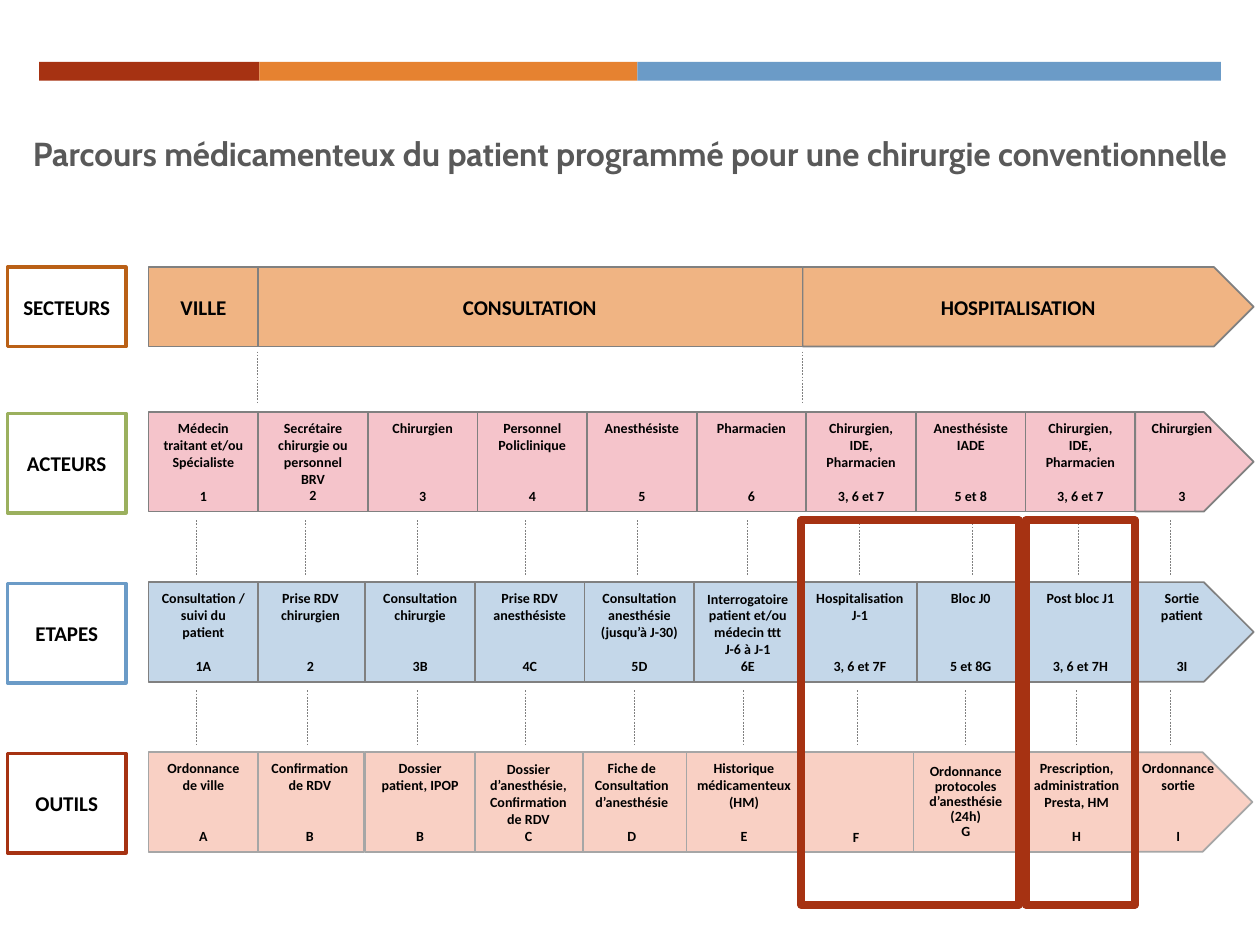
import pptx
import pptx.util
import pptx.dml.color
import pptx.enum.dml
import pptx.enum.shapes
import pptx.enum.text
import pptx.oxml.ns
import lxml.etree

Inches, Pt = pptx.util.Inches, pptx.util.Pt
RGBColor = pptx.dml.color.RGBColor
SHAPE = pptx.enum.shapes.MSO_SHAPE
ANCHOR = pptx.enum.text.MSO_ANCHOR
CENTER = pptx.enum.text.PP_ALIGN.CENTER

BLACK = RGBColor(0x00, 0x00, 0x00)
WHITE = RGBColor(0xFF, 0xFF, 0xFF)
TITLE_GRAY = RGBColor(0x59, 0x59, 0x59)
GRAY = RGBColor(0x80, 0x80, 0x80)
LIGHT_GRAY = RGBColor(0xA6, 0xA6, 0xA6)
RED = RGBColor(0xA6, 0x32, 0x12)
ORANGE = RGBColor(0xE6, 0x82, 0x30)
BLUE = RGBColor(0x6B, 0x9B, 0xC7)
BROWN = RGBColor(0xBA, 0x60, 0x16)
GREEN = RGBColor(0x9B, 0xB0, 0x5E)
PEACH = RGBColor(0xF0, 0xB4, 0x83)
PINK = RGBColor(0xF5, 0xC4, 0xCB)
PALE_BLUE = RGBColor(0xC4, 0xD7, 0xE9)
SALMON = RGBColor(0xF9, 0xD0, 0xC4)

CELL_LINES = 5      # text lines in a cell; the code stands on the last one
LINE_HEIGHT = 9.77  # points, for 8 pt text
ROW_HEIGHT = 0.79

# Cells: label, number of lines it wraps to, code
ACTORS = [
    ("Médecin traitant et/ou Spécialiste", 3, "1"),
    ("Secrétaire chirurgie ou personnel BRV", 4, "2"),
    ("Chirurgien", 1, "3"),
    ("Personnel Policlinique", 2, "4"),
    ("Anesthésiste", 1, "5"),
    ("Pharmacien", 1, "6"),
    ("Chirurgien, IDE, Pharmacien", 3, "3, 6 et 7"),
    ("Anesthésiste IADE", 2, "5 et 8"),
    ("Chirurgien, IDE, Pharmacien", 3, "3, 6 et 7"),
    ("Chirurgien", 1, "3"),
]
STEPS = [
    ("Consultation / suivi du patient", 3, "1A"),
    ("Prise RDV chirurgien", 2, "2"),
    ("Consultation chirurgie", 2, "3B"),
    ("Prise RDV anesthésiste", 2, "4C"),
    ("Consultation anesthésie (jusqu’à J-30)", 3, "5D"),
    ("Interrogatoire patient et/ou médecin ttt\nJ-6 à J-1", 4, "6E"),
    ("Hospitalisation\nJ-1", 2, "3, 6 et 7F"),
    ("Bloc J0", 1, "5 et 8G"),
    ("Post bloc J1", 1, "3, 6 et 7H"),
    ("Sortie patient", 2, "3I"),
]
TOOLS = [
    ("Ordonnance de ville", 2, "A"),
    ("Confirmation de RDV", 2, "B"),
    ("Dossier patient, IPOP", 2, "B"),
    ("Dossier d’anesthésie, Confirmation de RDV", 4, "C"),
    ("Fiche de Consultation d’anesthésie", 3, "D"),
    ("Historique médicamenteux (HM)", 3, "E"),
    ("", 0, "F"),
    ("Ordonnance protocoles d’anesthésie (24h)", 4, "G"),
    ("Prescription, administration Presta, HM", 3, "H"),
    ("Ordonnance sortie", 2, "I"),
]

ACTOR_LEFTS = [1.18 + 0.87 * i for i in range(10)]
STEP_LEFTS = [1.18, 2.03, 2.9, 3.77, 4.64, 5.5, 6.37, 7.27, 8.14, 9.01]
TOOL_LEFTS = [1.18, 2.03, 2.9, 3.76, 4.58, 5.43, 6.34, 7.23, 8.09, 8.96]
ACTOR_WIDTHS = [0.87] * 9 + [0.94]
STEP_WIDTHS = [0.87] * 6 + [0.91, 0.87, 0.87, 0.94]
TOOL_WIDTHS = [0.87, 0.86, 0.87, 0.87, 0.87, 0.95, 0.91, 0.87, 0.91, 0.98]


def add_box(page, kind, left, top, width, height, fill, line, line_width=1):
    box = page.shapes.add_shape(kind, Inches(left), Inches(top), Inches(width), Inches(height))
    box.shadow.inherit = False
    if fill is None:
        box.fill.background()
    else:
        box.fill.solid()
        box.fill.fore_color.rgb = fill
    if line is None:
        box.line.fill.background()
    else:
        box.line.color.rgb = line
        box.line.width = Pt(line_width)
    frame = box.text_frame
    frame.word_wrap = True
    frame.vertical_anchor = ANCHOR.MIDDLE
    frame.margin_top = frame.margin_bottom = Inches(0.05)
    return box


def add_text(para, text, size, color=BLACK, font="Calibri"):
    para.alignment = CENTER
    for index, line in enumerate(text.split("\n")):
        if index:
            para.add_line_break()
        span = para.add_run()
        span.text = line
        span.font.name = font
        span.font.size = Pt(size)
        span.font.bold = True
        span.font.color.rgb = color


def add_heading(page, left, top, width, height):
    title = page.shapes.title
    title.left, title.top = Inches(left), Inches(top)
    title.width, title.height = Inches(width), Inches(height)
    title.text_frame.word_wrap = True
    title.text_frame.vertical_anchor = ANCHOR.MIDDLE
    add_text(title.text_frame.paragraphs[0],
             "Parcours médicamenteux du patient programmé pour une chirurgie conventionnelle",
             19, TITLE_GRAY, "Cabin")


def add_color_bar(page, left, top, height):
    for width, color in ((1.75, RED), (3, ORANGE), (4.63, BLUE)):
        add_box(page, SHAPE.RECTANGLE, left, top, width, height, color, None)
        left += width


def add_dashes(page, positions, top, bottom):
    for x in positions:
        dash = page.shapes.add_connector(pptx.enum.shapes.MSO_CONNECTOR.STRAIGHT,
                                         Inches(x), Inches(top), Inches(x), Inches(bottom))
        dash.line.color.rgb = GRAY
        dash.line.width = Pt(0.25)
        dash.line.dash_style = pptx.enum.dml.MSO_LINE.DASH
        properties = dash._element.find(pptx.oxml.ns.qn("p:spPr"))
        lxml.etree.SubElement(properties, pptx.oxml.ns.qn("a:effectLst"))


def add_row_label(page, text, top, height, line):
    box = add_box(page, SHAPE.RECTANGLE, 0.06, top, 0.94, height, WHITE, line, 2)
    add_text(box.text_frame.paragraphs[0], text, 12)


def add_sectors(page, top, height):
    add_row_label(page, "SECTEURS", top, height, BROWN)
    for text, left, width, kind in (("HOSPITALISATION", 6.37, 3.58, SHAPE.PENTAGON),
                                    ("CONSULTATION", 2.04, 4.33, SHAPE.RECTANGLE),
                                    ("VILLE", 1.18, 0.87, SHAPE.RECTANGLE)):
        box = add_box(page, kind, left, top, width, height, PEACH, GRAY)
        add_text(box.text_frame.paragraphs[0], text, 12)


def add_row(page, name, top, cells, lefts, widths, fill, line, label_line):
    add_row_label(page, name, top + 0.01, ROW_HEIGHT, label_line)
    # Right to left, so that each cell covers the edge of the next one
    for index in reversed(range(len(cells))):
        label, lines, code = cells[index]
        kind = SHAPE.PENTAGON if index == len(cells) - 1 else SHAPE.RECTANGLE
        box = add_box(page, kind, lefts[index], top, widths[index], ROW_HEIGHT, fill, line)
        frame = box.text_frame
        para = frame.paragraphs[0]
        if label:
            add_text(para, label, 8)
            para = frame.add_paragraph()
            para.space_before = Pt((CELL_LINES - 1 - lines) * LINE_HEIGHT)
        else:
            frame.vertical_anchor = ANCHOR.BOTTOM
        add_text(para, code, 8)
        if code == "G":
            for tight in frame.paragraphs:
                tight.line_spacing = 0.9


def main():
    deck = pptx.Presentation()
    deck.slide_width, deck.slide_height = Inches(10), Inches(7.5)
    page = deck.slides.add_slide(deck.slide_layouts[5])

    # Heading
    add_color_bar(page, 0.31, 0.49, 0.15)
    add_heading(page, 0.09, 0.75, 9.82, 0.93)

    # Dashed links between rows
    add_dashes(page, (2.04, 6.37), 2.79, 3.2)
    add_dashes(page, (1.56, 2.42, 3.31, 4.17, 5.06, 5.93, 6.82, 7.72, 8.56, 9.29), 4.13, 4.57)
    add_dashes(page, (1.56, 2.44, 3.31, 4.17, 5.03, 5.9, 6.8, 7.66, 8.54, 9.29), 5.48, 5.91)

    # Rows of the pathway
    add_sectors(page, 2.12, 0.63)
    add_row(page, "ACTEURS", 3.27, ACTORS, ACTOR_LEFTS, ACTOR_WIDTHS, PINK, GRAY, GREEN)
    add_row(page, "ETAPES", 4.62, STEPS, STEP_LEFTS, STEP_WIDTHS, PALE_BLUE, GRAY, BLUE)
    add_row(page, "OUTILS", 5.97, TOOLS, TOOL_LEFTS, TOOL_WIDTHS, SALMON, LIGHT_GRAY, RED)

    # Highlight frames
    for left, width in ((6.36, 1.73), (8.14, 0.87)):
        add_box(page, SHAPE.RECTANGLE, left, 4.13, width, 3.05, None, RED, 4.5)

    deck.save("out.pptx")


if __name__ == "__main__":
    main()
